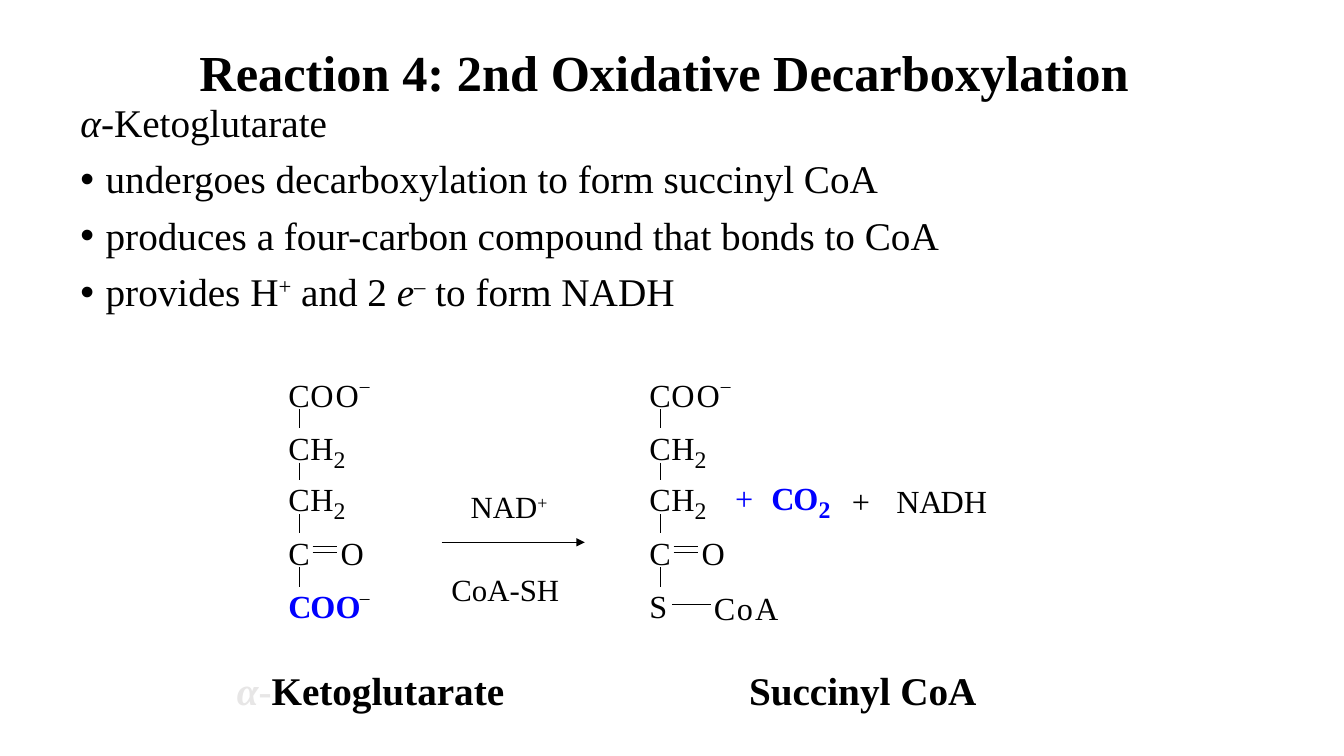
import lxml.etree
import pptx
import pptx.dml.color
import pptx.enum.shapes
import pptx.enum.text
import pptx.oxml.ns
import pptx.util

Inches = pptx.util.Inches
Pt = pptx.util.Pt
qn = pptx.oxml.ns.qn

COLORS = {"ink": "000000", "leaving": "0000FF", "faint": "E7E6E6"}
GLYPH_WIDTHS = {"C": 0.21, "O": 0.23, "H": 0.23, "N": 0.23, "A": 0.23, "D": 0.23,
                "S": 0.18, "+": 0.18, "o": 0.16, "2": 0.12, "–": 0.11}

presentation = pptx.Presentation()
presentation.slide_width = Inches(13.33)
presentation.slide_height = Inches(7.5)
slide = presentation.slides.add_slide(presentation.slide_layouts[6])


def add_text(box, lines, size, color="ink", bold=False, inset=None, wrap=False):
    """Add a text box; a line is a list of (text, style), style "i" italic, "^" raised, or a colour."""
    frame = slide.shapes.add_textbox(*[Inches(length) for length in box]).text_frame
    frame.word_wrap = wrap
    if inset is not None:
        frame.margin_left = frame.margin_right = Inches(inset)
        frame.margin_top = frame.margin_bottom = Inches(inset)
    for index, line in enumerate(lines):
        paragraph = frame.add_paragraph() if index else frame.paragraphs[0]
        paragraph.font.size = Pt(size)
        paragraph.font.name = "Times New Roman"
        paragraph.font.bold = bold
        paragraph.font.color.rgb = pptx.dml.color.RGBColor.from_string(COLORS[color])
        for text, style in line:
            run = paragraph.add_run()
            run.text = text
            if "i" in style.split():
                run.font.italic = True
            if "^" in style.split():
                run._r.get_or_add_rPr().set("baseline", "30000")
            if "faint" in style.split():
                run.font.color.rgb = pptx.dml.color.RGBColor.from_string(COLORS["faint"])
    return frame


def add_line(x1, y1, x2, y2, width=1):
    line = slide.shapes.add_connector(
        pptx.enum.shapes.MSO_CONNECTOR.STRAIGHT,
        Inches(x1), Inches(y1), Inches(x2), Inches(y2))
    line.line.width = Pt(width)
    line.line.color.rgb = pptx.dml.color.RGBColor.from_string(COLORS["ink"])
    lxml.etree.SubElement(line._element.spPr, qn("a:effectLst"))
    return line


# Title and statements
title = add_text((1.88, 0.25, 9.54, 1), [[("Reaction 4: 2nd Oxidative Decarboxylation", "")]],
                 36, bold=True, wrap=True)
title.vertical_anchor = pptx.enum.text.MSO_ANCHOR.MIDDLE
title.paragraphs[0].line_spacing = 0.9

statements = add_text((0.7, 0.98, 12.5, 2.4), [
    [("α", "i"), ("-Ketoglutarate", "")],
    [("undergoes decarboxylation to form succinyl CoA", "")],
    [("produces a four-carbon compound that bonds to CoA", "")],
    [("provides H", ""), ("+", "^"), (" and 2 ", ""), ("e", "i"), ("–", "^"),
     (" to form NADH", "")],
], 28, wrap=True)
for index, paragraph in enumerate(statements.paragraphs):
    paragraph.line_spacing = 0.9
    paragraph.space_before = Pt(10)
    properties = paragraph._p.get_or_add_pPr()
    properties.set("marL", str(Inches(0.25)))
    properties.set("indent", str(Inches(-0.25 if index else -0.25)))
    if index:
        bullet_font = lxml.etree.SubElement(properties, qn("a:buFont"))
        bullet_font.set("typeface", "Arial")
        lxml.etree.SubElement(properties, qn("a:buChar")).set("char", "•")
        # Schema order: bullets come before the default run properties
        properties.append(properties.find(qn("a:defRPr")))

# Formulas: each fragment is left, top, glyphs, glyph offsets, colour, bold
carboxylate = ("COO–", (0, 0.22, 0.47, 0.71))
methylene = ("CH2", (0, 0.22, 0.45))
fragments = [
    (2.86, 5.82, *carboxylate, "leaving", True),
    (6.44, 5.82, "S", (0,), "ink", False),
    (7.08, 5.84, "CoA", (0, 0.23, 0.41), "ink", False),
    (7.29, 4.75, "+", (0,), "leaving", False),
    (7.65, 4.75, "CO2", (0, 0.22, 0.47), "leaving", True),
    (8.45, 4.77, "+", (0,), "ink", False),
    (8.89, 4.77, "NADH", (0, 0.23, 0.44, 0.67), "ink", False),
]
for chain_left in (2.86, 6.44):
    fragments += [
        (chain_left, 3.72, *carboxylate, "ink", False),
        (chain_left, 4.25, *methylene, "ink", False),
        (chain_left, 4.76, *methylene, "ink", False),
        (chain_left, 5.29, "CO", (0, 0.52), "ink", False),
    ]
    for bond_top, bond_bottom in ((4.06, 4.25), (4.59, 4.76), (5.1, 5.29), (5.63, 5.82)):
        add_line(chain_left + 0.11, bond_top, chain_left + 0.11, bond_bottom)
    for double_bond_y in (5.42, 5.48):
        add_line(chain_left + 0.24, double_bond_y, chain_left + 0.48, double_bond_y)
add_line(6.67, 6, 7.05, 6)

for left, top, glyphs, offsets, color, bold in fragments:
    for glyph, offset in zip(glyphs, offsets):
        size, drop, height, style = {"2": (17, 0.16, 0.29, ""),
                                     "–": (24, -0.06, 0.27, "^")}.get(glyph, (23, 0, 0.38, ""))
        charge = glyph == "–"
        add_text((left + offset, top + drop, GLYPH_WIDTHS[glyph], height), [[(glyph, style)]],
                 size, "ink" if charge else color, bold and not charge, inset=0)

# Reaction arrow with its cofactors
arrow = add_line(4.38, 5.38, 5.8, 5.38, 0.75)
arrow_line = arrow.line._get_or_add_ln()
lxml.etree.SubElement(arrow_line, qn("a:tailEnd")).set("type", "triangle")
add_text((4.57, 4.79, 0.98, 0.47), [[("NAD", ""), ("+", "^")]], 22)
add_text((4.38, 5.61, 1.27, 0.47), [[("CoA-SH", "")]], 22)

# Compound names
add_text((2.35, 6.61, 2.66, 0.45), [[("α", "i faint"), ("-", "faint"), ("Ketoglutarate", "")]],
         28, bold=True, inset=0)
add_text((7.43, 6.61, 2.26, 0.45), [[("Succinyl CoA", "")]], 28, bold=True, inset=0)

presentation.save("out.pptx")
